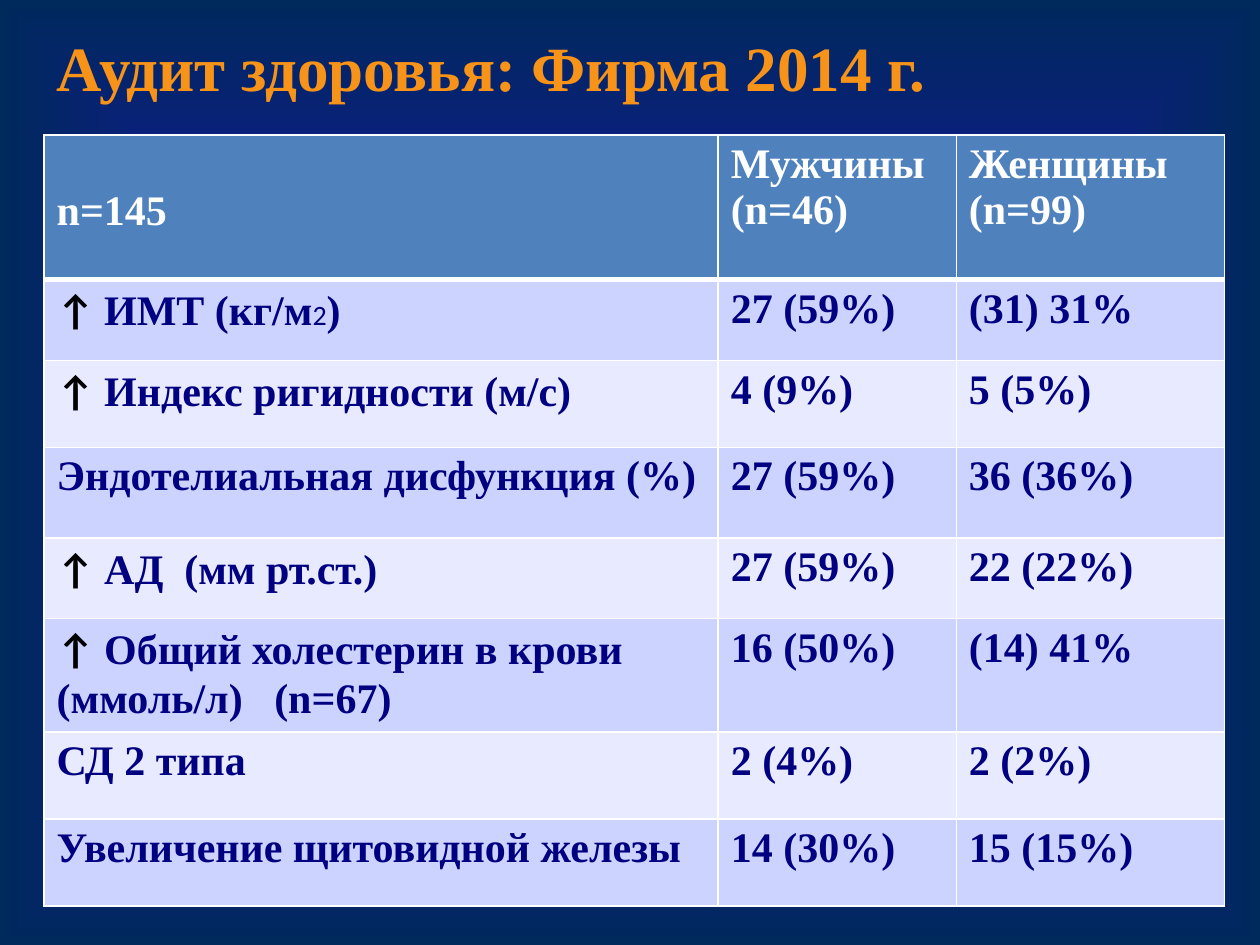
from lxml import etree
from pptx import Presentation
from pptx.dml.color import RGBColor
from pptx.enum.text import MSO_ANCHOR, PP_ALIGN
from pptx.oxml.ns import qn
from pptx.util import Inches, Pt

LEFT = PP_ALIGN.LEFT
MIDDLE = MSO_ANCHOR.MIDDLE

BLUE = RGBColor(0x21, 0x0B, 0xC5)
DARK = RGBColor(0x00, 0x29, 0x5C)
ORANGE = RGBColor(0xF7, 0x93, 0x19)
HEADER = RGBColor(0x4F, 0x81, 0xBD)
BANDS = (RGBColor(0xE8, 0xEA, 0xFF), RGBColor(0xCD, 0xD3, 0xFF))
WHITE = RGBColor(0xFF, 0xFF, 0xFF)
BLACK = RGBColor(0x00, 0x00, 0x00)
NAVY = RGBColor(0x00, 0x00, 0x80)

SERIF = "Times New Roman"
TITLE = {"name": SERIF, "size": Pt(36), "bold": True, "color": ORANGE}
HEAD = {"name": SERIF, "size": Pt(24), "bold": True, "color": WHITE}
BODY = {**HEAD, "color": NAVY}
ARROW = {**BODY, "name": "Calibri", "color": BLACK}
SMALL = {**BODY, "name": "Calibri", "size": Pt(16), "bold": False}
UP = ("↑ ", ARROW)

COLUMNS = (5.35, 1.89, 2.13)
HEIGHTS = (1.15, 0.64, 0.69, 0.72, 0.64, 0.9, 0.69, 0.69)

# A cell is a list of paragraphs, a paragraph is a list of (text, format)
HEADINGS = [
    [[("n=145", HEAD)]],
    [[("Мужчины (n=46)", HEAD)]],
    [[("Женщины", HEAD)], [("(n=99)", HEAD)]],
]
# Label spans, men, women
FINDINGS = [
    ([UP, ("ИМТ (кг/м", BODY), ("2", SMALL), (")", BODY)], "27 (59%)", "(31) 31%"),
    ([UP, ("Индекс ригидности (м/с)", BODY)], "4 (9%)", "5 (5%)"),
    ([("Эндотелиальная дисфункция (%)", BODY)], "27 (59%)", "36 (36%)"),
    ([UP, ("АД  (мм рт.ст.)", BODY)], "27 (59%)", "22 (22%)"),
    ([UP, ("Общий холестерин в крови (ммоль/л)   (n=67)", BODY)],
     "16 (50%)", "(14) 41%"),
    ([("СД 2 типа", BODY)], "2 (4%)", "2 (2%)"),
    ([("Увеличение щитовидной железы", BODY)], "14 (30%)", "15 (15%)"),
]


def add_span(para, text, style):
    span = para.add_run()
    span.text = text
    for key, value in style.items():
        if key == "color":
            span.font.color.rgb = value
        else:
            setattr(span.font, key, value)


def fill_background(page):
    fill = page.background.fill
    fill.gradient()
    for stop, color in zip(fill.gradient_stops, (BLUE, DARK)):
        stop.color.rgb = color
    # Gradient runs from the centre to the edges
    gradient = next(page.element.iter(qn("a:gradFill")))
    line = gradient.find(qn("a:lin"))
    shade = etree.Element(qn("a:path"), {"path": "shape"})
    etree.SubElement(shade, qn("a:fillToRect"),
                     {side: "50000" for side in "ltrb"})
    gradient.replace(line, shade)


def add_title(page, text):
    title = page.shapes.title
    title.left, title.top = Inches(0.35), Inches(0.21)
    title.width, title.height = Inches(9.29), Inches(0.63)
    title.text_frame.vertical_anchor = MIDDLE
    para = title.text_frame.paragraphs[0]
    para.alignment = LEFT
    add_span(para, text, TITLE)


def set_borders(cell, top, bottom):
    properties = cell._tc.get_or_add_tcPr()
    widths = {"L": 1, "R": 1, "T": top, "B": bottom}
    for index, (side, width) in enumerate(widths.items()):
        line = etree.Element(qn(f"a:ln{side}"), {"w": str(Pt(width))})
        solid = etree.SubElement(line, qn("a:solidFill"))
        etree.SubElement(solid, qn("a:srgbClr"), {"val": str(WHITE)})
        properties.insert(index, line)


def write_cell(cell, paragraphs, color):
    cell.fill.solid()
    cell.fill.fore_color.rgb = color
    frame = cell.text_frame
    for index, spans in enumerate(paragraphs):
        para = frame.add_paragraph() if index else frame.paragraphs[0]
        for text, style in spans:
            add_span(para, text, style)


def add_findings_table(page):
    rows = [HEADINGS] + [
        [[label], [[(men, BODY)]], [[(women, BODY)]]]
        for label, men, women in FINDINGS
    ]
    table = page.shapes.add_table(
        len(rows), len(COLUMNS), Inches(0.35), Inches(1.07),
        Inches(sum(COLUMNS)), Inches(sum(HEIGHTS))).table
    for column, width in zip(table.columns, COLUMNS):
        column.width = Inches(width)
    for index, (row, height) in enumerate(zip(table.rows, HEIGHTS)):
        row.height = Inches(height)
        color = BANDS[index % 2] if index else HEADER
        for cell, paragraphs in zip(row.cells, rows[index]):
            write_cell(cell, paragraphs, color)
            # Thick rule between the header and the first finding
            set_borders(cell, 3 if index == 1 else 1, 3 if index == 0 else 1)
    # The sample size sits on the second line of the header
    table.cell(0, 0).margin_top = Inches(0.42)


def main():
    deck = Presentation()
    deck.slide_width, deck.slide_height = Inches(10), Inches(7.5)
    page = deck.slides.add_slide(deck.slide_layouts[5])
    fill_background(page)
    add_title(page, "Аудит здоровья: Фирма 2014 г.")
    add_findings_table(page)
    deck.save("out.pptx")


if __name__ == "__main__":
    main()
